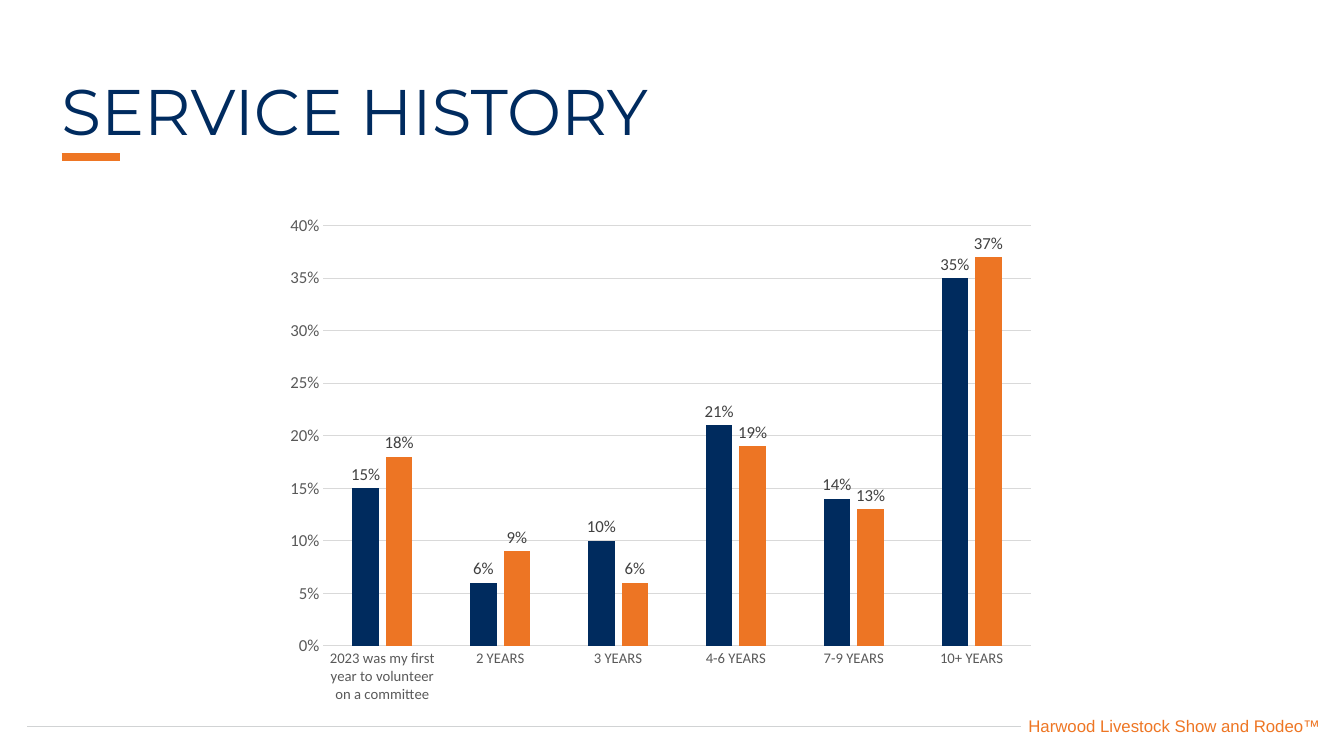
"""Build the service history slide with its clustered column chart."""
from dataclasses import dataclass

from lxml import etree
from pptx import Presentation
from pptx.chart.data import CategoryChartData
from pptx.dml.color import RGBColor
from pptx.enum.chart import XL_CHART_TYPE, XL_LABEL_POSITION, XL_TICK_MARK
from pptx.enum.shapes import MSO_CONNECTOR
from pptx.enum.text import MSO_ANCHOR, PP_ALIGN
from pptx.oxml.ns import qn
from pptx.util import Cm, Pt

COLUMNS = XL_CHART_TYPE.COLUMN_CLUSTERED
OUTSIDE = XL_LABEL_POSITION.OUTSIDE_END
NO_TICK = XL_TICK_MARK.NONE
STRAIGHT = MSO_CONNECTOR.STRAIGHT
TOP = MSO_ANCHOR.TOP
LEFT, RIGHT = PP_ALIGN.LEFT, PP_ALIGN.RIGHT

NAVY, ORANGE, GRID, AXIS_TEXT = "002B5F", "EE7624", "D9D9D9", "595959"


@dataclass
class Rule:
    left: float
    right: float
    height: float
    color: str
    weight: float


@dataclass
class Label:
    text: str
    left: float
    top: float
    width: float
    height: float
    font: dict
    layout: dict


@dataclass
class Series:
    name: str
    values: tuple
    color: str


RULES = [
    Rule(0.69, 25.73, 18.31, "D1D3D4", 1),
    Rule(1.55, 3.02, 3.96, ORANGE, 6),
]
LABELS = [
    Label("Harwood Livestock Show and Rodeo™", 17.5, 17.91, 16.03, 0.76,
          {"name": "Arial", "size": Pt(12), "color": ORANGE},
          {"alignment": RIGHT}),
    Label("SERVICE HISTORY", 1.3, 1.88, 33.6, 1.14,
          {"name": "Montserrat", "size": Pt(46), "color": NAVY},
          {"alignment": LEFT, "line_spacing": 0.9, "space_before": Pt(10)}),
]
CATEGORIES = ("2023 was my first year to volunteer on a committee",
              "2 YEARS", "3 YEARS", "4-6 YEARS", "7-9 YEARS", "10+ YEARS")
SERIES = [
    Series("Series 1", (0.15, 0.06, 0.10, 0.21, 0.14, 0.35), "002B5E"),
    Series("Series 2", (0.18, 0.09, 0.06, 0.19, 0.13, 0.37), "ED7524"),
]


def rgb(color: str) -> RGBColor:
    return RGBColor.from_string(color)


def set_all(target, values: dict) -> None:
    for name, value in values.items():
        setattr(target, name, value)


def set_font(font, values: dict) -> None:
    set_all(font, {key: value for key, value in values.items() if key != "color"})
    font.color.rgb = rgb(values["color"])


def set_line(line, color: str, weight: float) -> None:
    line.color.rgb = rgb(color)
    line.width = Pt(weight)


def draw_rule(page, rule: Rule) -> None:
    connector = page.shapes.add_connector(
        STRAIGHT, Cm(rule.left), Cm(rule.height), Cm(rule.right), Cm(rule.height))
    set_line(connector.line, rule.color, rule.weight)
    etree.SubElement(connector.element.spPr, qn("a:effectLst"))


def draw_label(page, label: Label) -> None:
    box = page.shapes.add_textbox(
        Cm(label.left), Cm(label.top), Cm(label.width), Cm(label.height))
    set_all(box.text_frame, {"word_wrap": True, "vertical_anchor": TOP})
    para = box.text_frame.paragraphs[0]
    set_all(para, label.layout)
    span = para.add_run()
    span.text = label.text
    set_font(span.font, label.font)


def format_axes(chart) -> None:
    for axis, size in ((chart.category_axis, 10.5), (chart.value_axis, 12)):
        set_all(axis, {"major_tick_mark": NO_TICK, "minor_tick_mark": NO_TICK})
        set_font(axis.tick_labels.font,
                 {"name": "Calibri", "size": Pt(size), "color": AXIS_TEXT})
    set_line(chart.category_axis.format.line, GRID, 0.75)
    scale = chart.value_axis
    set_all(scale, {"minimum_scale": 0, "maximum_scale": 0.4,
                    "major_unit": 0.05, "has_major_gridlines": True})
    set_all(scale.tick_labels,
            {"number_format": "0%", "number_format_is_linked": False})
    scale.format.line.fill.background()
    set_line(scale.major_gridlines.format.line, GRID, 0.75)


def draw_chart(page) -> None:
    data = CategoryChartData(number_format="0%")
    data.categories = CATEGORIES
    for series in SERIES:
        data.add_series(series.name, series.values)
    chart = page.shapes.add_chart(
        COLUMNS, Cm(6.93), Cm(5.18), Cm(19.43), Cm(12.8), data).chart
    set_all(chart, {"has_legend": False, "has_title": False})
    set_font(chart.font, {"name": "Calibri", "size": Pt(10), "color": "000000"})
    plot = chart.plots[0]
    set_all(plot, {"gap_width": 219, "overlap": -27, "vary_by_categories": False})
    for bars, series in zip(plot.series, SERIES):
        bars.format.fill.solid()
        bars.format.fill.fore_color.rgb = rgb(series.color)
        set_all(bars.data_labels,
                {"show_value": True, "number_format": "0%",
                 "number_format_is_linked": False, "position": OUTSIDE})
        set_font(bars.data_labels.font,
                 {"name": "Calibri", "size": Pt(12), "color": "404040"})
    format_axes(chart)


def main() -> None:
    deck = Presentation()
    set_all(deck, {"slide_width": Cm(33.87), "slide_height": Cm(19.05)})
    page = deck.slides.add_slide(deck.slide_layouts[6])
    for label in LABELS:
        draw_label(page, label)
    for rule in RULES:
        draw_rule(page, rule)
    draw_chart(page)
    deck.save("out.pptx")


if __name__ == "__main__":
    main()
